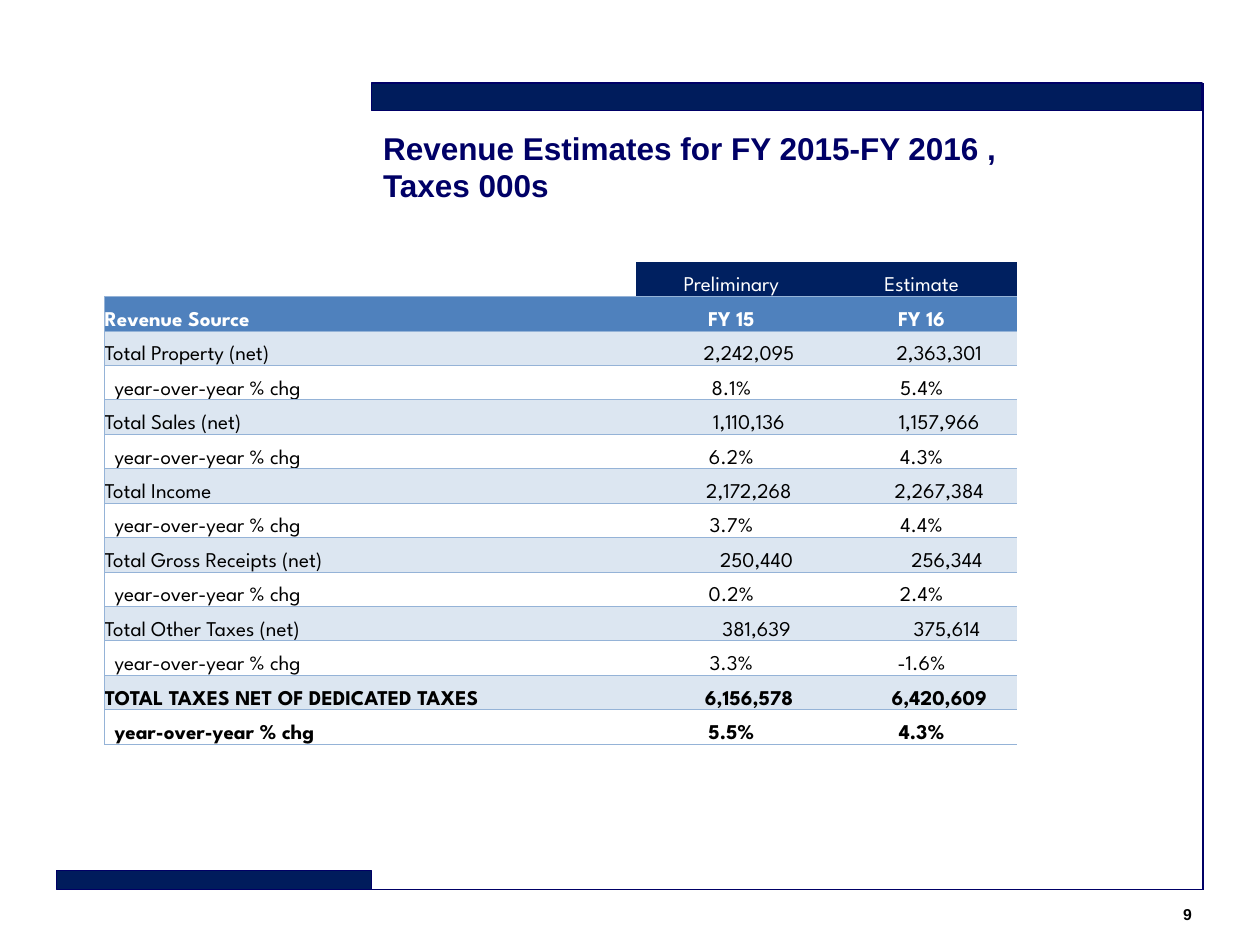
from dataclasses import dataclass

from lxml import etree
from pptx import Presentation
from pptx.dml.color import RGBColor
from pptx.enum.shapes import MSO_CONNECTOR, MSO_SHAPE
from pptx.enum.text import MSO_ANCHOR, PP_ALIGN
from pptx.oxml.ns import qn
from pptx.util import Inches, Pt

LEFT, CENTER, RIGHT = PP_ALIGN.LEFT, PP_ALIGN.CENTER, PP_ALIGN.RIGHT
TOP, BOTTOM = MSO_ANCHOR.TOP, MSO_ANCHOR.BOTTOM
RECTANGLE = MSO_SHAPE.RECTANGLE
STRAIGHT = MSO_CONNECTOR.STRAIGHT


@dataclass(frozen=True)
class Theme:
    bar: str = "001C5C"
    navy: str = "000066"
    period_fill: str = "002060"
    header_fill: str = "4F81BD"
    band_fill: str = "DCE6F1"
    rule: str = "95B3D7"
    white: str = "FFFFFF"
    black: str = "000000"
    font: str = "Arial"
    table_font: str = "League Spartan"
    title_size: int = 18
    table_size: int = 12
    number_size: int = 9


THEME = Theme()
NO_STYLE_NO_GRID = "{2D5ABB26-0587-4C30-8999-92F81FD0307C}"


def write_text(text_frame, text, *, size, color, font=THEME.font, bold=False,
               align=LEFT, anchor=TOP, margins=(0.09, 0.04, 0.09, 0.04)):
    """Write one paragraph per line of text."""
    text_frame.word_wrap = True
    text_frame.vertical_anchor = anchor
    (text_frame.margin_left, text_frame.margin_top,
     text_frame.margin_right, text_frame.margin_bottom) = map(Inches, margins)
    for index, line in enumerate(text.split("\n")):
        paragraph = text_frame.paragraphs[0] if index == 0 else text_frame.add_paragraph()
        paragraph.alignment = align
        run = paragraph.add_run()
        run.text = line
        run.font.name = font
        run.font.size = Pt(size)
        run.font.bold = bold
        run.font.color.rgb = RGBColor.from_string(color)


def add_border(cell, side):
    """Draw a thin rule on one side of a cell: L, T or B."""
    properties = cell._tc.get_or_add_tcPr()
    line = etree.SubElement(properties, qn(f"a:ln{side}"), w=str(Pt(0.5)))
    fill = etree.SubElement(line, qn("a:solidFill"))
    etree.SubElement(fill, qn("a:srgbClr"), val=THEME.rule)


presentation = Presentation()
presentation.slide_width = Inches(10)
presentation.slide_height = Inches(7.5)
slide = presentation.slides.add_slide(presentation.slide_layouts[5])

# Frame: two bars and two lines
for left, top, width, height in [(2.95, 0.66, 6.59, 0.22), (0.45, 6.91, 2.5, 0.15)]:
    bar = slide.shapes.add_shape(
        RECTANGLE, Inches(left), Inches(top), Inches(width), Inches(height))
    bar.shadow.inherit = False
    bar.fill.solid()
    bar.fill.fore_color.rgb = RGBColor.from_string(THEME.bar)
    bar.line.color.rgb = RGBColor.from_string(THEME.navy)
    bar.line.width = Pt(0.75)

for start_x, start_y in [(9.55, 0.66), (0.45, 7.06)]:
    edge = slide.shapes.add_connector(
        STRAIGHT, Inches(start_x), Inches(start_y), Inches(9.55), Inches(7.06))
    edge.line.color.rgb = RGBColor.from_string(THEME.navy)
    edge.line.width = Pt(1)
    etree.SubElement(edge.element.spPr, qn("a:effectLst"))

# Title
title = slide.shapes.title
title.left, title.top = Inches(2.95), Inches(0.98)
title.width, title.height = Inches(6.3), Inches(0.7)
write_text(title.text_frame, "Revenue Estimates for FY 2015-FY 2016 ,\nTaxes 000s",
           size=THEME.title_size, color=THEME.navy, bold=True)

# Slide number
number = slide.shapes.add_textbox(Inches(9.21), Inches(7.14), Inches(0.34), Inches(0.24))
write_text(number.text_frame, "9", size=THEME.number_size, color=THEME.black,
           bold=True, align=RIGHT)

# Revenue table: each source has an amount row and a change row
revenues = [
    ("Total Property (net)", "2,242,095", "2,363,301", "8.1%", "5.4%"),
    ("Total Sales (net)", "1,110,136", "1,157,966", "6.2%", "4.3%"),
    ("Total Income", "2,172,268", "2,267,384", "3.7%", "4.4%"),
    ("Total Gross Receipts (net)", "250,440", "256,344", "0.2%", "2.4%"),
    ("Total Other Taxes (net)", "381,639", "375,614", "3.3%", "-1.6%"),
    ("TOTAL TAXES NET OF DEDICATED TAXES", "6,156,578", "6,420,609", "5.5%", "4.3%"),
]
rows = [("", "Preliminary", "Estimate"), ("Revenue Source", "FY 15", "FY 16")]
for source, amount_15, amount_16, change_15, change_16 in revenues:
    rows.append((source, amount_15, amount_16))
    rows.append(("year-over-year % chg", change_15, change_16))

frame = slide.shapes.add_table(
    len(rows), 3, Inches(0.83), Inches(2.08), Inches(7.25), Inches(3.83))
frame.element.find(".//" + qn("a:tableStyleId")).text = NO_STYLE_NO_GRID
table = frame.table
table.first_row = table.horz_banding = False
for column, width in zip(table.columns, [4.22, 1.51, 1.51]):
    column.width = Inches(width)

for row_index, row in enumerate(rows):
    is_header = row_index < 2
    is_amount = not is_header and row_index % 2 == 0
    is_total = row_index >= len(rows) - 2
    for column_index, text in enumerate(row):
        cell = table.cell(row_index, column_index)

        # Rules
        if row_index > 0:
            if column_index == 0:
                add_border(cell, "L")
            add_border(cell, "T")
        add_border(cell, "B")

        # Fill
        if row_index == 0:
            fill = THEME.period_fill if text else None
        elif row_index == 1:
            fill = THEME.header_fill
        else:
            fill = THEME.band_fill if is_amount else None
        if fill:
            cell.fill.solid()
            cell.fill.fore_color.rgb = RGBColor.from_string(fill)
        else:
            cell.fill.background()

        # Text: amounts sit right of centre, change labels are indented
        indent = 0
        if is_amount and column_index > 0:
            indent = 0.28 if len(text) > 7 else 0.4
        elif column_index == 0 and not is_header and not is_amount:
            indent = 0.08
        cell.vertical_anchor = BOTTOM
        cell.margin_left = Inches(indent)
        cell.margin_top = cell.margin_right = cell.margin_bottom = 0
        if text:
            write_text(cell.text_frame, text, size=THEME.table_size,
                       color=THEME.white if is_header else THEME.black,
                       font=THEME.table_font, bold=row_index == 1 or is_total,
                       align=LEFT if column_index == 0 else CENTER,
                       anchor=BOTTOM, margins=(0, 0, 0, 0))
            cell.margin_left = Inches(indent)
        else:
            # Keep the empty corner cell from stretching its row
            etree.SubElement(cell.text_frame.paragraphs[0]._p, qn("a:endParaRPr"),
                             sz=str(THEME.table_size * 100))

presentation.save("out.pptx")
